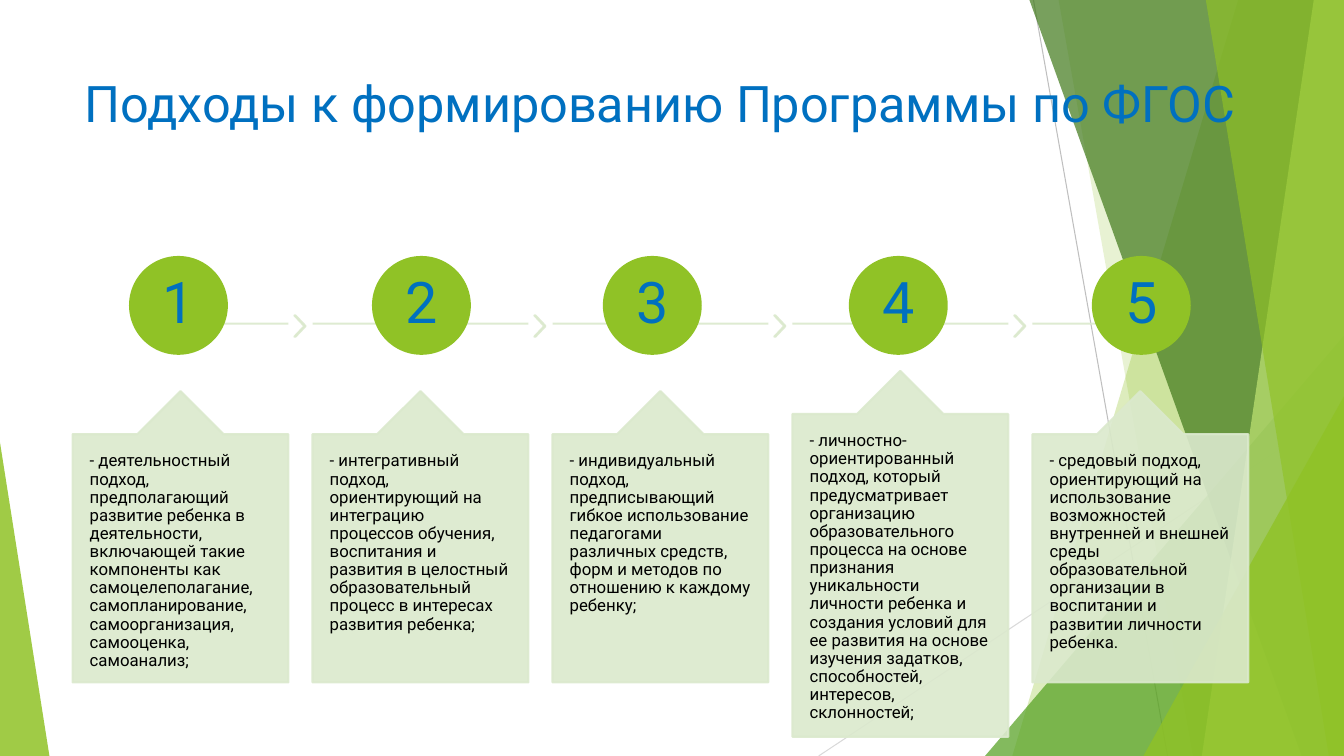
from lxml.etree import SubElement
from pptx import Presentation
from pptx.dml.color import RGBColor
from pptx.enum.shapes import MSO_CONNECTOR, MSO_SHAPE
from pptx.enum.text import MSO_ANCHOR, PP_ALIGN
from pptx.oxml.ns import qn
from pptx.util import Inches, Pt

COLORS = {
    "title": "0070C0", "body": "000000", "lime": "90C226", "pale": "DBE9CD",
    "leaf": "54A021", "forest": "3F7819", "light": "C0E474",
    "ray": "BFBFBF", "faint_ray": "D9D9D9",
}
FONT = "Roboto"
WIDTH, HEIGHT = 13.33, 7.5

RAYS = [((10.25, 0), (11.58, HEIGHT), "ray"),
        ((WIDTH, 4.03), (8.12, HEIGHT), "faint_ray")]
# Each facet: top x, bottom x, colour, opacity
BACK_FACETS = [(12.28, 10.04, "lime", 30), (10.5, 11.83, "lime", 20)]
FRONT_FACETS = [(10.21, 12.91, "forest", 70), (13.03, 11.92, "light", 70),
                (11.96, 13.18, "lime", 65)]

STEP_PITCH = 2.38
CARD_WIDTH = 2.14
# Each approach: circle left, card top, card height, text
APPROACHES = [
    (1.29, 3.88, 2.89, "- деятельностный подход, предполагающий развитие ребенка в деятельности, "
     "включающей такие компоненты как самоцелеполагание, самопланирование, самоорганизация, "
     "самооценка, самоанализ;"),
    (3.7, 3.88, 2.89, "- интегративный подход, ориентирующий на интеграцию процессов обучения, "
     "воспитания и развития в целостный образовательный процесс в интересах развития ребенка;"),
    (5.99, 3.88, 2.89, "- индивидуальный подход, предписывающий гибкое использование педагогами "
     "различных средств, форм и методов по отношению к каждому ребенку;"),
    (8.43, 3.68, 3.63, "- личностно-ориентированный подход, который предусматривает организацию "
     "образовательного процесса на основе признания уникальности личности ребенка и создания "
     "условий для ее развития на основе изучения задатков, способностей, интересов, склонностей;"),
    (10.84, 3.88, 2.89, "- средовый подход, ориентирующий на использование возможностей внутренней "
     "и внешней среды образовательной организации в воспитании и развитии личности ребенка."),
]


def rgb(name):
    """Return the named palette colour."""
    return RGBColor.from_string(COLORS[name])


def set_opacity(item, percent):
    """Apply one opacity to every colour in the item's fill and line."""
    for color in item.element.spPr.iter(qn("a:srgbClr")):
        SubElement(color, qn("a:alpha")).set("val", str(percent * 1000))


def paint(shape, color, opacity=100, outlined=False):
    """Fill a shape, with an optional outline of the same colour."""
    shape.shadow.inherit = False
    shape.fill.solid()
    shape.fill.fore_color.rgb = rgb(color)
    if outlined:
        shape.line.color.rgb = rgb(color)
        shape.line.width = Pt(1.5)
    else:
        shape.line.fill.background()
    if opacity < 100:
        set_opacity(shape, opacity)


def add_preset(slide, preset, box, color, opacity=100, adjustments=(), outlined=False):
    """Add a painted preset shape in the given box."""
    shape = slide.shapes.add_shape(preset, *map(Inches, box))
    for index, value in enumerate(adjustments):
        shape.adjustments[index] = value
    paint(shape, color, opacity, outlined)
    return shape


def add_line(slide, start, end, color, width, opacity=100):
    """Add a plain straight line."""
    line = slide.shapes.add_connector(MSO_CONNECTOR.STRAIGHT, *map(Inches, (*start, *end)))
    line.line.color.rgb = rgb(color)
    line.line.width = Pt(width)
    SubElement(line.element.spPr, qn("a:effectLst"))
    if opacity < 100:
        set_opacity(line, opacity)


def write_text(holder, text, size, color, align=PP_ALIGN.LEFT, anchor=MSO_ANCHOR.TOP,
               insets=(0.1, 0.05), line_spacing=None):
    """Write formatted text into a shape or text box."""
    frame = holder.text_frame
    frame.word_wrap = True
    frame.vertical_anchor = anchor
    frame.margin_left = frame.margin_right = Inches(insets[0])
    frame.margin_top = frame.margin_bottom = Inches(insets[1])
    paragraph = frame.paragraphs[0]
    paragraph.alignment = align
    if line_spacing:
        paragraph.line_spacing = line_spacing
    run = paragraph.add_run()
    run.text = text
    run.font.name = FONT
    run.font.size = Pt(size)
    run.font.color.rgb = rgb(color)


def add_facets(slide, facets, right, height):
    """Add translucent bands that run from a slanted edge to the right side."""
    for top_x, bottom_x, color, opacity in facets:
        builder = slide.shapes.build_freeform(Inches(top_x), 0)
        corners = [(right, 0), (right, height), (bottom_x, height)]
        builder.add_line_segments([(Inches(x), Inches(y)) for x, y in corners], close=True)
        paint(builder.convert_to_shape(), color, opacity)


def add_corner(slide, box, color, opacity, apex):
    """Add a right triangle whose apex is at the given share of its width."""
    add_preset(slide, MSO_SHAPE.ISOSCELES_TRIANGLE, box, color, opacity, (apex,))


def draw_backdrop(slide, width, height):
    """Draw the faceted green decoration around the slide."""
    for start, end, color in RAYS:
        add_line(slide, start, end, color, 0.75)
    add_facets(slide, BACK_FACETS, width, height)
    add_corner(slide, (9.77, 3.33, width - 9.77, height - 3.33), "leaf", 72, 1)
    add_facets(slide, FRONT_FACETS, width, height)
    add_corner(slide, (11.34, 3.93, width - 11.34, height - 3.93), "lime", 80, 1)
    add_corner(slide, (0, 4.39, 0.49, height - 4.39), "lime", 85, 0)


def draw_title(slide, box):
    """Write the slide title in its box."""
    title = slide.shapes.add_textbox(*map(Inches, box))
    write_text(title, "Подходы к формированию Программы по ФГОС", size=36, color="title")


def draw_step(slide, number, left, top, approach):
    """Draw one numbered approach with its track, circle and card."""
    circle_left, card_top, card_height, text = approach
    middle, right = left + CARD_WIDTH / 2, left + CARD_WIDTH
    last = number == len(APPROACHES)
    track_y = top + 0.66
    add_line(slide, (middle if number == 1 else left, track_y),
             (middle if last else right, track_y), "pale", 1.5, 90)
    if not last:
        add_preset(slide, MSO_SHAPE.CHEVRON, (right + 0.06, top + 0.58, 0.11, 0.21),
                   "pale", 90, (0.9,), outlined=True)
    circle = add_preset(slide, MSO_SHAPE.OVAL, (circle_left, top, 0.96, 0.96),
                        "lime", outlined=True)
    write_text(circle, str(number), size=41, color="title", align=PP_ALIGN.CENTER,
               anchor=MSO_ANCHOR.MIDDLE, insets=(0.04, 0.04), line_spacing=0.9)
    card = add_preset(slide, MSO_SHAPE.UP_ARROW_CALLOUT,
                      (left, card_top, CARD_WIDTH, card_height),
                      "pale", 90, (0.5, 0.2, 0.2, 1), outlined=True)
    write_text(card, text, size=12, color="body", insets=(0.17, 0.18), line_spacing=0.9)


def draw_process(slide, left, top):
    """Draw the row of approaches at an equal pitch."""
    for index, approach in enumerate(APPROACHES):
        draw_step(slide, index + 1, left + index * STEP_PITCH, top, approach)


def main():
    """Build and save the slide."""
    deck = Presentation()
    deck.slide_width, deck.slide_height = Inches(WIDTH), Inches(HEIGHT)
    slide = deck.slides.add_slide(deck.slide_layouts[6])
    draw_backdrop(slide, WIDTH, HEIGHT)
    draw_title(slide, (0.74, 0.67, 11.65, 1.44))
    draw_process(slide, 0.72, 2.55)
    deck.save("out.pptx")


if __name__ == "__main__":
    main()
